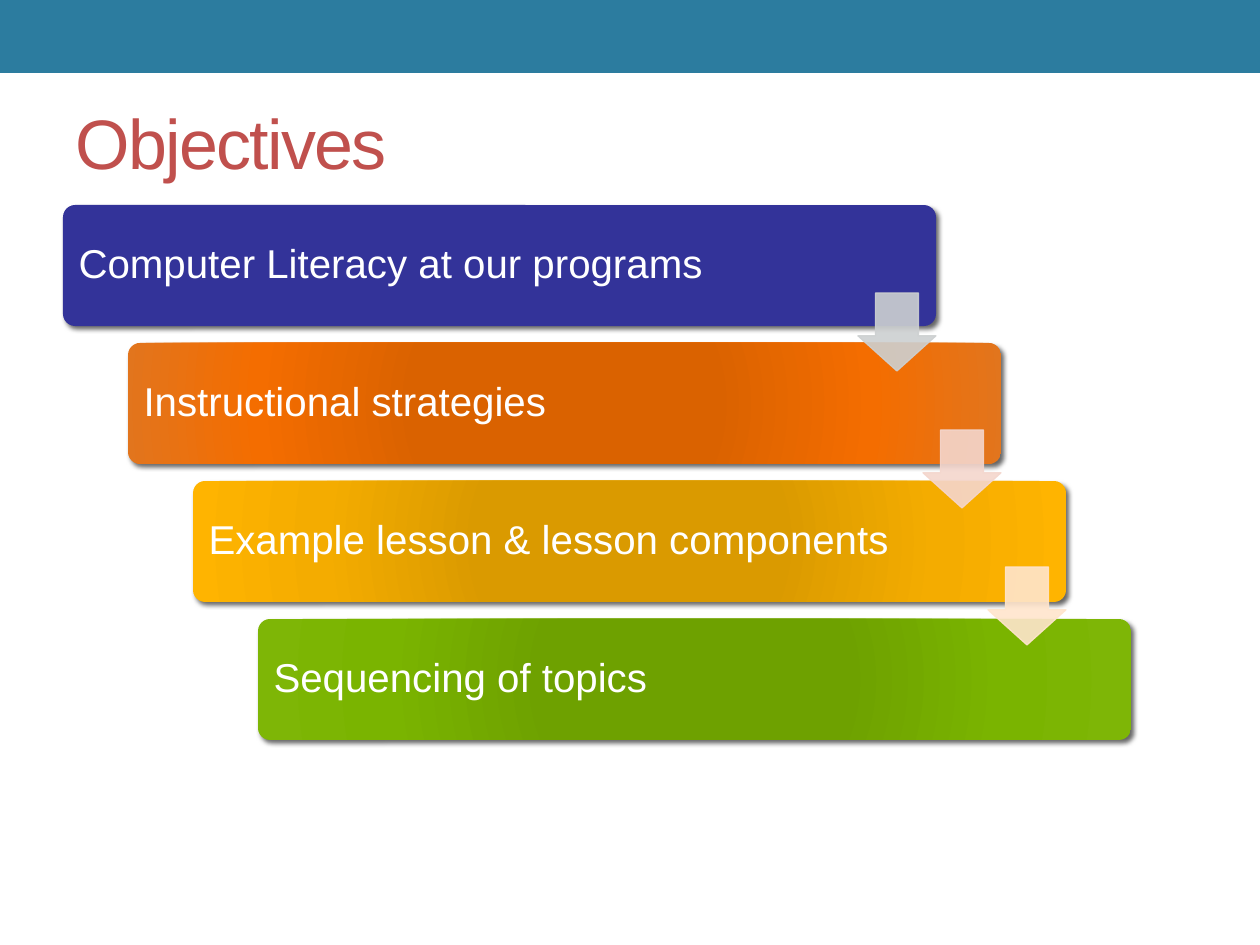
from lxml.etree import SubElement
from pptx import Presentation
from pptx.dml.color import RGBColor
from pptx.enum.shapes import MSO_SHAPE
from pptx.enum.text import MSO_ANCHOR, PP_ALIGN
from pptx.oxml import parse_xml
from pptx.oxml.ns import nsdecls, qn
from pptx.util import Emu, Pt

EMU_PER_PX = 914400 / 126
FONT = "Arial"

# Text and gradient stops (centre, centre edge, middle, rim) of each bar
STOP_POSITIONS = (0, 34, 70, 100)
OBJECTIVES = [
    ("Computer Literacy at our programs", ["333399"]),
    ("Instructional strategies", ["DA6200", "DA6200", "F46D00", "E2751D"]),
    ("Example lesson & lesson components", ["DA9A00", "DA9A00", "F4AC00", "FFB400"]),
    ("Sequencing of topics", ["6EA100", "6EA100", "7AB400", "7EB606"]),
]
ARROW_COLORS = ["CDD0D1", "F4D6CD", "FFE5CC"]


def px(length):
    return Emu(round(length * EMU_PER_PX))


def color(hex_value):
    return RGBColor.from_string(hex_value)


def add_run(paragraph, text, size, hex_value):
    run = paragraph.add_run()
    run.text = text
    run.font.name = FONT
    run.font.size = Pt(size)
    run.font.color.rgb = color(hex_value)
    return run


def add_filled_shape(slide, kind, left, top, width, height, hex_value):
    shape = slide.shapes.add_shape(kind, px(left), px(top), px(width), px(height))
    shape.shadow.inherit = False
    shape.fill.solid()
    shape.fill.fore_color.rgb = color(hex_value)
    shape.line.fill.background()
    return shape


def set_radial_gradient(shape, hex_values):
    stops = "".join(
        f'<a:gs pos="{position * 1000}"><a:srgbClr val="{value}"/></a:gs>'
        for position, value in zip(STOP_POSITIONS, hex_values)
    )
    gradient = parse_xml(
        f'<a:gradFill {nsdecls("a")} rotWithShape="1"><a:gsLst>{stops}</a:gsLst>'
        '<a:path path="circle"><a:fillToRect l="100000" t="100000" r="100000" b="100000"/>'
        "</a:path></a:gradFill>"
    )
    properties = shape.element.spPr
    properties.replace(properties.find(qn("a:solidFill")), gradient)


def add_drop_shadow(shape):
    effects = shape.element.spPr.find(qn("a:effectLst"))
    effects.append(parse_xml(
        f'<a:outerShdw {nsdecls("a")} blurRad="{Pt(3)}" dist="{Pt(2)}" dir="2700000"'
        ' algn="ctr" rotWithShape="0">'
        '<a:srgbClr val="000000"><a:alpha val="60000"/></a:srgbClr></a:outerShdw>'
    ))


def set_opacity(shape, percent):
    for value in shape.element.spPr.iter(qn("a:srgbClr")):
        SubElement(value, qn("a:alpha"), val=str(percent * 1000))


def add_title(slide, text):
    title = slide.shapes.title
    title.left, title.top, title.width, title.height = px(63), px(73), px(1134), px(136)
    frame = title.text_frame
    frame.vertical_anchor = MSO_ANCHOR.MIDDLE
    paragraph = frame.paragraphs[0]
    paragraph.alignment = PP_ALIGN.LEFT
    run = add_run(paragraph, text, 40, "C0504D")
    run.font._element.set("spc", "-100")


def add_bar(slide, left, top, text, hex_values):
    bar = add_filled_shape(
        slide, MSO_SHAPE.ROUNDED_RECTANGLE, left, top, 873, 121, hex_values[0])
    bar.adjustments[0] = 0.1
    if len(hex_values) > 1:
        set_radial_gradient(bar, hex_values)
    add_drop_shadow(bar)
    frame = bar.text_frame
    frame.word_wrap = True
    frame.vertical_anchor = MSO_ANCHOR.MIDDLE
    frame.margin_left = frame.margin_right = px(12)
    frame.margin_top = frame.margin_bottom = px(12)
    paragraph = frame.paragraphs[0]
    paragraph.alignment = PP_ALIGN.LEFT
    paragraph.line_spacing = 0.9
    add_run(paragraph, text, 23, "FFFFFF")


def add_arrow(slide, left, top, hex_value):
    arrow = add_filled_shape(slide, MSO_SHAPE.DOWN_ARROW, left, top, 78, 78, hex_value)
    arrow.adjustments[0] = 0.55
    arrow.adjustments[1] = 0.45
    arrow.line.color.rgb = color(hex_value)
    arrow.line.width = Pt(0.75)
    set_opacity(arrow, 90)


def main():
    presentation = Presentation()
    presentation.slide_width, presentation.slide_height = px(1260), px(945)
    slide = presentation.slides.add_slide(presentation.slide_layouts[5])

    # Header band and title
    add_filled_shape(slide, MSO_SHAPE.RECTANGLE, 0, 0, 1260, 73, "2C7C9F")
    add_title(slide, "Objectives")

    # Staircase of bars
    for step, (text, hex_values) in enumerate(OBJECTIVES):
        add_bar(slide, 63 + 65 * step, 205 + 138 * step, text, hex_values)

    # Arrows leading from each bar to the next
    for step, hex_value in enumerate(ARROW_COLORS):
        add_arrow(slide, 858 + 65 * step, 293 + 137 * step, hex_value)

    presentation.save("out.pptx")


if __name__ == "__main__":
    main()
